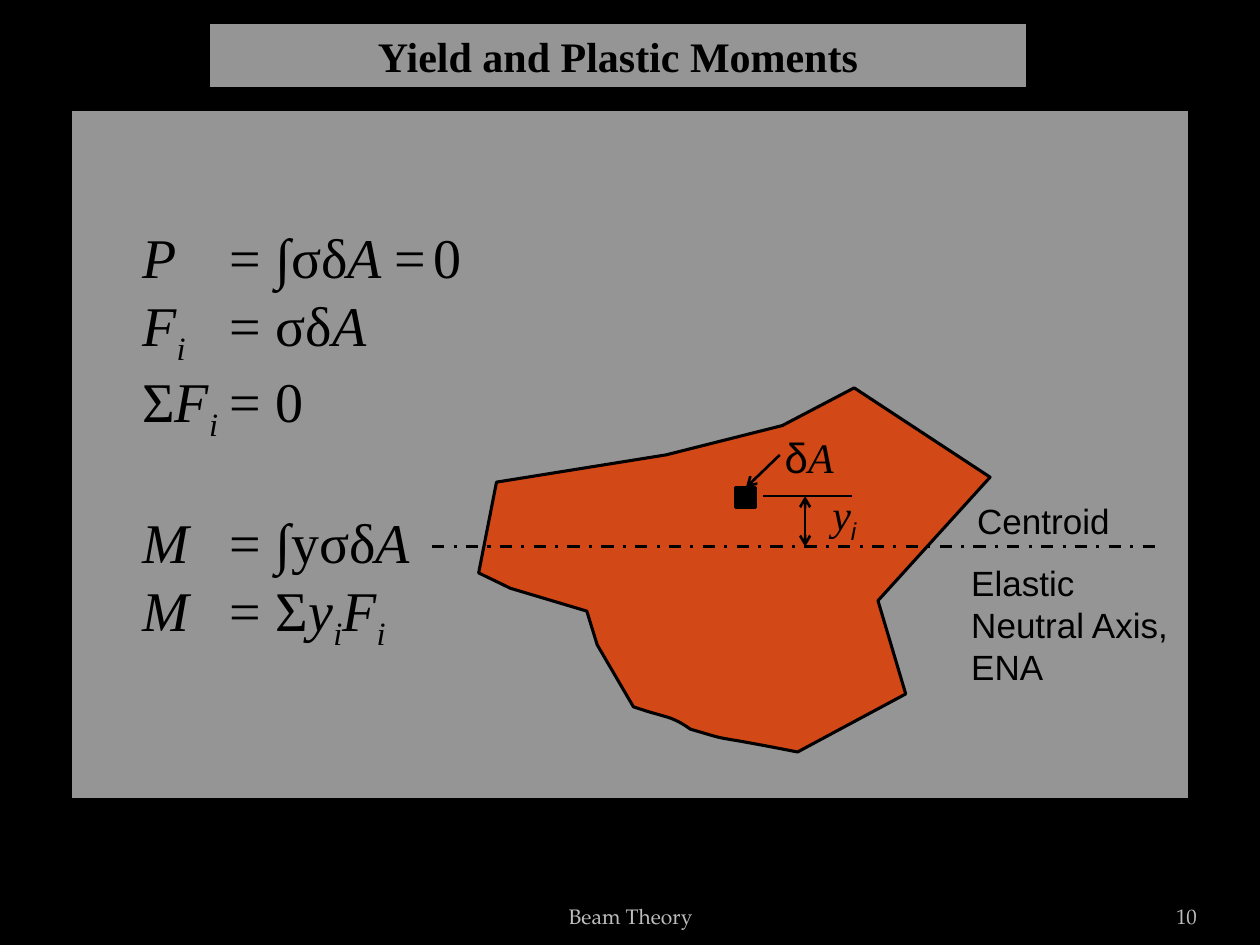
from lxml.etree import SubElement
from pptx import Presentation
from pptx.dml.color import RGBColor
from pptx.enum.dml import MSO_LINE
from pptx.enum.shapes import MSO_CONNECTOR, MSO_SHAPE
from pptx.enum.text import MSO_ANCHOR, MSO_AUTO_SIZE, PP_ALIGN
from pptx.oxml.ns import qn
from pptx.util import Cm, Pt

COLORS = {"ink": "000000", "panel": "F2F2F2", "section": "D34817", "footer": "BDBDBD"}
SERIF, SANS, FOOTER = "Times New Roman", "Arial", "TeX Gyre Pagella"
TABS = (1.75, 2.69, 5.08, 5.87)

# Runs are (text, style[, font]): i = italic, s = subscript
EQUATIONS = [
    [("P\t", "i"), ("=\t∫σδ", ""), ("A\t", "i"), ("=\t0", "")],
    [("F", "i"), ("i\t", "is"), ("=\tσδ", ""), ("A", "i")],
    [("Σ", ""), ("F", "i"), ("i\t", "is"), ("=\t0", "")],
    [("M\t", "i"), ("=\t∫yσδ", ""), ("A", "i")],
    [("M\t", "i"), ("=\tΣ", ""), ("y", "i"), ("i", "is"), ("F", "i"), ("i", "is")],
]
MOMENT_ROW = 3

# Section outline, relative to the figure box
OUTLINE_TOP = [(0, 3.73), (0.36, 1.9), (3.78, 1.35), (6.12, 0.76), (7.57, 0),
               (10.31, 1.8), (8.05, 4.29), (8.61, 6.17), (6.43, 7.34)]
CURVES = [((6.43, 7.34), (4.5, 6.96), (5.21, 7.16), (4.27, 6.88)),
          ((4.27, 6.88), (3.94, 6.65), (3.84, 6.65), (3.43, 6.53))]
OUTLINE_END = [(3.12, 6.43), (2.39, 5.18), (2.18, 4.5), (0.64, 4.04)]


def rgb(name):
    return RGBColor.from_string(COLORS[name])


def paint(sp, fill, width, alpha=None):
    sp.fill.solid()
    sp.fill.fore_color.rgb = rgb(fill)
    if alpha:
        color = sp.fill._xPr.find(qn("a:solidFill"))[0]
        SubElement(color, qn("a:alpha")).set("val", str(alpha * 1000))
    sp.line.color.rgb = rgb("ink")
    sp.line.width = Pt(width)


def set_font(font, size, name, color="ink"):
    font.size, font.name = Pt(size), name
    font.color.rgb = rgb(color)


def add_runs(p, runs, name):
    for text, style, *font in runs:
        r = p.add_run()
        r.text = text
        r.font.name = font[0] if font else name
        r.font.italic = "i" in style
        if "s" in style:
            r._r.get_or_add_rPr().set("baseline", "-25000")


def add_text(s, x, y, w, h, runs, size, name, color="ink", wrap=True):
    tf = s.shapes.add_textbox(Cm(x), Cm(y), Cm(w), Cm(h)).text_frame
    tf.word_wrap = wrap
    p = tf.paragraphs[0]
    set_font(p.font, size, name, color)
    add_runs(p, runs, name)
    return tf


def add_line(s, x1, y1, x2, y2, width=1.5, arrows=()):
    line = s.shapes.add_connector(MSO_CONNECTOR.STRAIGHT, Cm(x1), Cm(y1), Cm(x2), Cm(y2))
    line.line.color.rgb = rgb("ink")
    line.line.width = Pt(width)
    for end in arrows:
        SubElement(line.line._get_or_add_ln(), qn(f"a:{end}")).set("type", "arrow")
    SubElement(line._element.spPr, qn("a:effectLst"))
    return line


def bezier(p0, p1, p2, p3, steps=10):
    for k in range(1, steps + 1):
        t = k / steps
        u = 1 - t
        yield tuple(u**3 * a + 3 * u * u * t * b + 3 * u * t * t * c + t**3 * d
                    for a, b, c, d in zip(p0, p1, p2, p3))


def add_title(s, x, y, w, h):
    sp = s.shapes.title
    sp.left, sp.top, sp.width, sp.height = Cm(x), Cm(y), Cm(w), Cm(h)
    paint(sp, "panel", 3, alpha=62)
    tf = sp.text_frame
    tf.text = "Yield and Plastic Moments"
    tf.auto_size = MSO_AUTO_SIZE.NONE
    tf.vertical_anchor = MSO_ANCHOR.MIDDLE
    p = tf.paragraphs[0]
    p.alignment = PP_ALIGN.CENTER
    set_font(p.font, 24, SERIF)
    p.font.bold = True


def add_panel(s, x, y, w, h):
    sp = s.shapes.add_shape(MSO_SHAPE.RECTANGLE, Cm(x), Cm(y), Cm(w), Cm(h))
    sp.shadow.inherit = False
    paint(sp, "panel", 3, alpha=62)


def add_equations(s, x, y, w, h):
    tf = s.shapes.add_textbox(Cm(x), Cm(y), Cm(w), Cm(h)).text_frame
    tf.word_wrap = True
    for i, runs in enumerate(EQUATIONS):
        p = tf.add_paragraph() if i else tf.paragraphs[0]
        tabs = SubElement(p._p.get_or_add_pPr(), qn("a:tabLst"))
        for pos in TABS:
            tab = SubElement(tabs, qn("a:tab"))
            tab.set("pos", str(Cm(pos)))
            tab.set("algn", "l")
        if i == MOMENT_ROW:
            p.space_before = Pt(37)
        set_font(p.font, 32, SERIF)
        add_runs(p, runs, SERIF)


def add_figure(s, x, y):
    # Cross-section
    curved = [pt for curve in CURVES for pt in bezier(*curve)]
    points = [(Cm(x + px), Cm(y + py)) for px, py in OUTLINE_TOP + curved + OUTLINE_END]
    builder = s.shapes.build_freeform(*points[0])
    builder.add_line_segments(points[1:], close=True)
    section = builder.convert_to_shape()
    section.shadow.inherit = False
    paint(section, "section", 1.75)

    # Area element and neutral axis
    element = s.shapes.add_shape(MSO_SHAPE.RECTANGLE, Cm(x + 5.18), Cm(y + 2.01),
                                 Cm(0.41), Cm(0.41))
    element.shadow.inherit = False
    paint(element, "ink", 1.75)
    axis_y = y + 3.2
    axis = add_line(s, x - 0.94, axis_y, x + 13.74, axis_y, 1.75)
    axis.line.dash_style = MSO_LINE.DASH_DOT

    # Lever arm and pointer
    arm_y = y + 2.18
    add_line(s, x + 5.74, arm_y, x + 7.52, arm_y)
    add_line(s, x + 6.58, arm_y, x + 6.58, axis_y, arrows=("headEnd", "tailEnd"))
    pointer = add_line(s, x + 6.07, y + 1.35, x + 5.38, y + 2.01, arrows=("tailEnd",))
    pointer.end_connect(element, 0)

    # Labels
    add_text(s, x + 6.88, y + 1.9, 1.02, 1.27, [("y", "i"), ("i", "is", SANS)],
             24, SERIF, wrap=False)
    add_text(s, x + 5.92, y + 0.76, 1.7, 1.27, [("δ", ""), ("A", "i", SERIF)], 24, SANS)
    add_text(s, x + 9.8, y + 2.13, 3.94, 1.09, [("Centroid", "")], 20, SANS)
    add_text(s, x + 9.68, y + 3.38, 5, 2.79, [("Elastic Neutral Axis, ENA", "")], 20, SANS)


def add_footer(s, x, y, w, h):
    tf = add_text(s, x, y, 8.05, h, [("Beam Theory", "")], 12, FOOTER, "footer")
    number = add_text(s, x + w - 2.11, y, 2.11, h, [("10", "")], 12, FOOTER, "footer")
    number.margin_left = number.margin_right = 0
    for frame, align in ((tf, PP_ALIGN.CENTER), (number, PP_ALIGN.RIGHT)):
        frame.vertical_anchor = MSO_ANCHOR.BOTTOM
        frame.paragraphs[0].alignment = align


def main():
    prs = Presentation()
    prs.slide_width, prs.slide_height = Cm(25.4), Cm(19.05)
    s = prs.slides.add_slide(prs.slide_layouts[5])
    s.background.fill.solid()
    s.background.fill.fore_color.rgb = rgb("ink")
    add_panel(s, 1.4, 2.18, 22.61, 13.97)
    add_equations(s, 2.62, 4.37, 8.79, 8.38)
    add_figure(s, 9.65, 7.82)
    add_footer(s, 8.69, 17.83, 15.44, 1.02)
    add_title(s, 4.19, 0.43, 16.54, 1.37)
    prs.save("out.pptx")


if __name__ == "__main__":
    main()
